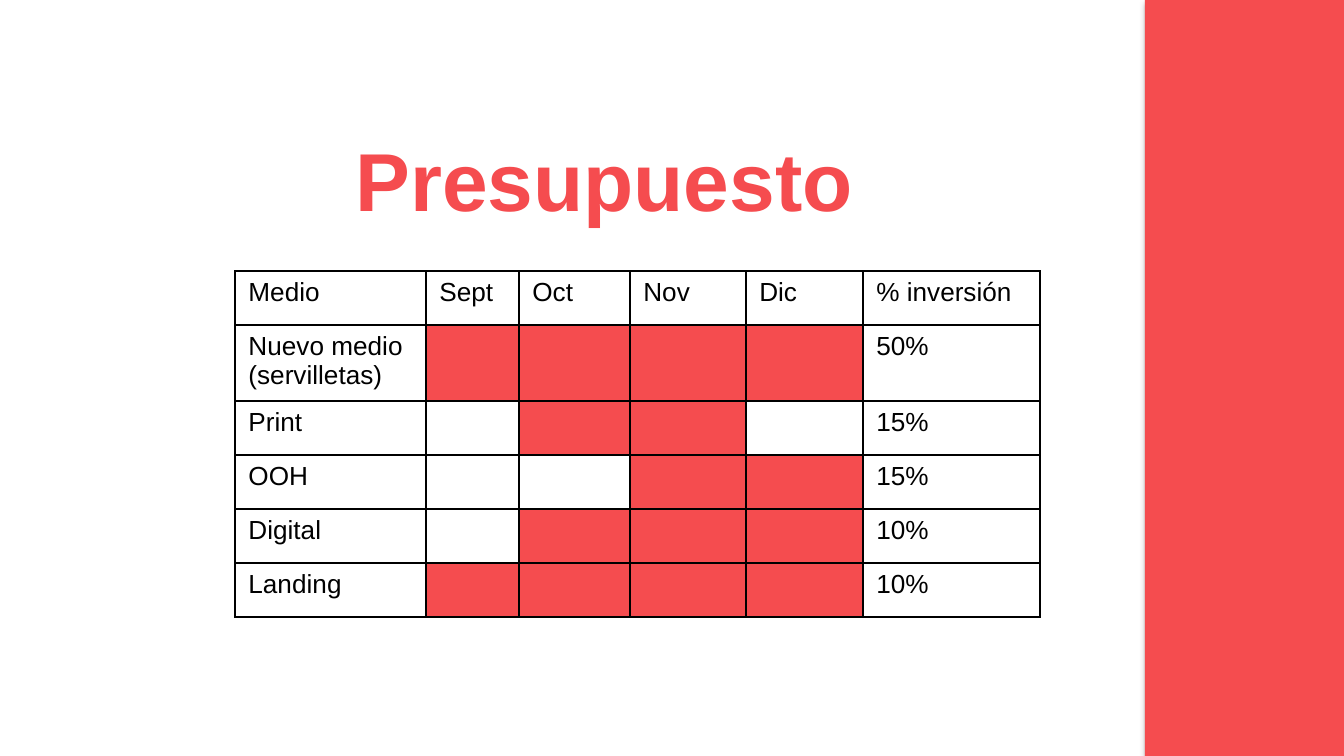
from lxml import etree
from pptx import Presentation
from pptx import util as u
from pptx.dml.color import RGBColor
from pptx.enum import shapes, text
from pptx.oxml import ns, parse_xml

SCALE = 914400 / 134.4  # EMU per px
RED, BLACK = "F54C4F", "000000"
FONT = "Arial"

COLUMN_WIDTHS = [191, 93, 111, 116, 117, 177]
ROW_HEIGHT = 54
HEADINGS = ["Medio", "Sept", "Oct", "Nov", "Dic", "% inversión"]
# Medium, active months (1 = filled), share of investment
BUDGET = [
    ("Nuevo medio (servilletas)", (1, 1, 1, 1), "50%"),
    ("Print", (0, 1, 1, 0), "15%"),
    ("OOH", (0, 0, 1, 1), "15%"),
    ("Digital", (0, 1, 1, 1), "10%"),
    ("Landing", (1, 1, 1, 1), "10%"),
]


def px(length):
    return u.Emu(round(length * SCALE))


def color(value):
    return RGBColor.from_string(value)


def add_run(paragraph, words, size, fill, bold=False):
    run = paragraph.add_run()
    run.text = words
    run.font.name = FONT
    run.font.size = u.Pt(size)
    run.font.bold = bold
    run.font.color.rgb = color(fill)


def add_side_band(slide, box):
    band = slide.shapes.add_shape(shapes.MSO_SHAPE.RECTANGLE, *map(px, box))
    band.fill.solid()
    band.fill.fore_color.rgb = color(RED)
    band.line.fill.background()
    # Soft shadow below the band
    band.shadow.inherit = False
    effects = band.element.spPr.find(ns.qn("a:effectLst"))
    effects.append(parse_xml(
        f'<a:outerShdw {ns.nsdecls("a")} blurRad="{u.Pt(3.1)}" dist="{u.Pt(1.8)}" '
        f'dir="5400000" rotWithShape="0"><a:srgbClr val="{BLACK}">'
        '<a:alpha val="35000"/></a:srgbClr></a:outerShdw>'))


def add_title(slide, box, words):
    frame = slide.shapes.add_textbox(*map(px, box)).text_frame
    frame.word_wrap = True
    frame.vertical_anchor = text.MSO_ANCHOR.TOP
    frame.margin_top, frame.margin_bottom = px(16), 0
    paragraph = frame.paragraphs[0]
    paragraph.alignment = text.PP_ALIGN.CENTER
    add_run(paragraph, words, 44, RED, bold=True)


def add_borders(cell):
    properties = cell._tc.get_or_add_tcPr()
    for position, side in enumerate(("lnL", "lnR", "lnT", "lnB")):
        line = etree.Element(ns.qn(f"a:{side}"), w=str(u.Pt(1)))
        fill = etree.SubElement(line, ns.qn("a:solidFill"))
        etree.SubElement(fill, ns.qn("a:srgbClr"), val=BLACK)
        properties.insert(position, line)


def fill_cell(cell, content):
    """Write text, or colour the cell when the content is a true flag."""
    if isinstance(content, str):
        add_run(cell.text_frame.paragraphs[0], content, 14, BLACK)
    if content == 1:
        cell.fill.solid()
        cell.fill.fore_color.rgb = color(RED)
    else:
        cell.fill.background()
    add_borders(cell)


def add_budget_table(slide, left, top):
    rows = [HEADINGS] + [[medium, *months, share] for medium, months, share in BUDGET]
    box = (left, top, sum(COLUMN_WIDTHS), ROW_HEIGHT * len(rows))
    table = slide.shapes.add_table(len(rows), len(HEADINGS), *map(px, box)).table
    table.first_row = table.horz_banding = False
    for column, width in zip(table.columns, COLUMN_WIDTHS):
        column.width = px(width)
    for row, contents in zip(table.rows, rows):
        row.height = px(ROW_HEIGHT)
        for cell, content in zip(row.cells, contents):
            fill_cell(cell, content)


def main():
    presentation = Presentation()
    presentation.slide_width, presentation.slide_height = px(1344), px(756)
    slide = presentation.slides.add_slide(presentation.slide_layouts[6])
    add_side_band(slide, (1145, 0, 199, 756))
    add_title(slide, (173, 113, 863, 113), "Presupuesto")
    add_budget_table(slide, 235, 271)
    presentation.save("out.pptx")


if __name__ == "__main__":
    main()
